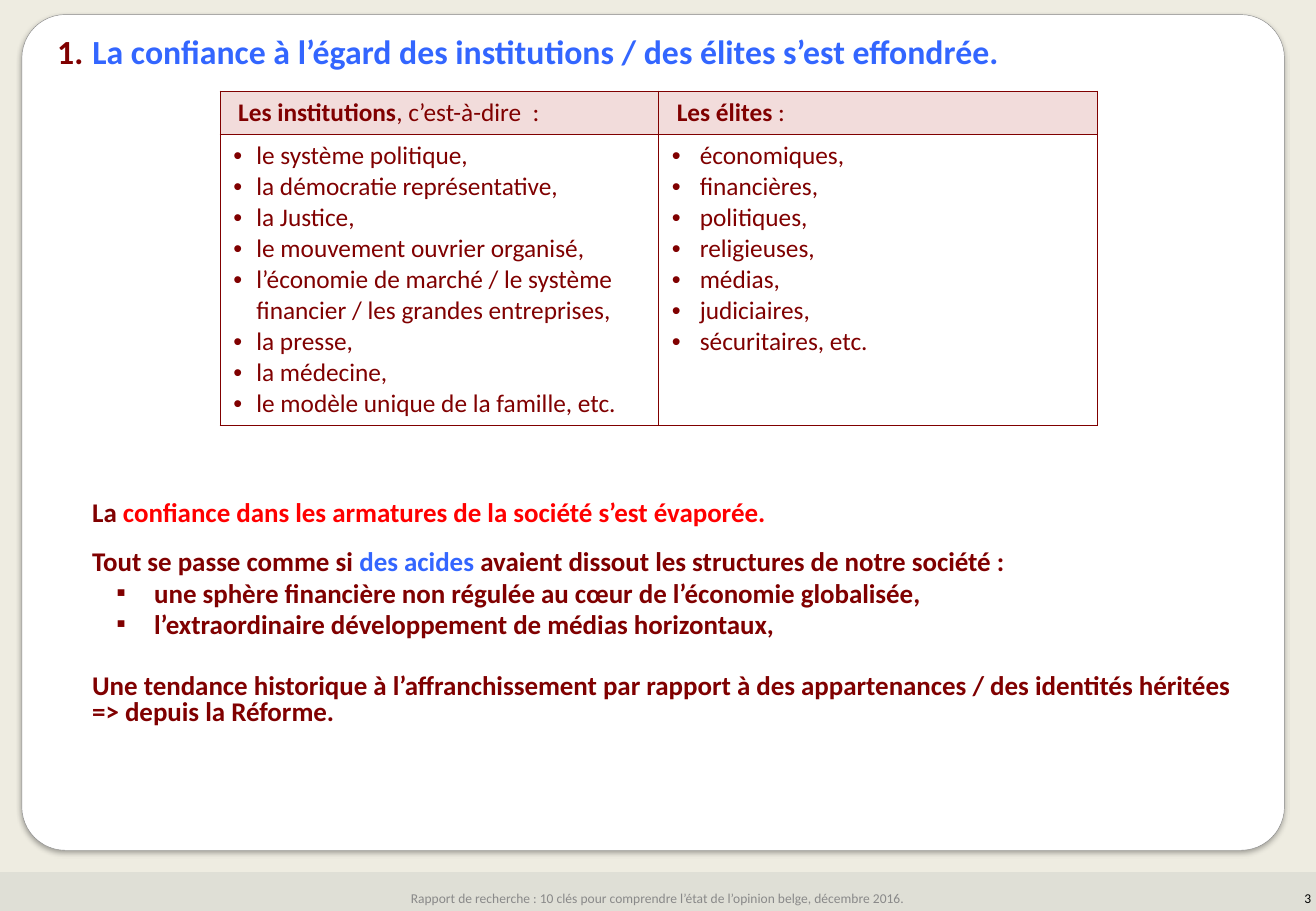
from dataclasses import dataclass
from typing import Any, NamedTuple

import lxml.etree
import pptx
import pptx.dml.color
import pptx.enum.shapes
import pptx.enum.text
import pptx.oxml
import pptx.oxml.ns
import pptx.util

RGBColor = pptx.dml.color.RGBColor
Align = pptx.enum.text.PP_ALIGN
Anchor = pptx.enum.text.MSO_ANCHOR

SAND = RGBColor(0xEE, 0xEC, 0xE1)
BAND = RGBColor(0xDF, 0xDF, 0xD6)
WHITE = RGBColor(0xFF, 0xFF, 0xFF)
BLACK = RGBColor(0x00, 0x00, 0x00)
GREY = RGBColor(0x89, 0x89, 0x89)
MAROON = RGBColor(0x80, 0x00, 0x00)
BLUE = RGBColor(0x33, 0x66, 0xFF)
RED = RGBColor(0xFF, 0x00, 0x00)
PINK = RGBColor(0xF2, 0xDC, 0xDB)

WIDTH = pptx.util.Inches(10.83)
HEIGHT = pptx.util.Inches(7.5)
FONT = "Calibri"
NUMBERED = '<a:buAutoNum {ns} type="arabicPeriod"/>'
ROUND = '<a:buChar {ns} char="•"/>'
SQUARE = '<a:buChar {ns} char="▪"/>'


class Area(NamedTuple):
    """A place on the slide, in hundredths of its width and height."""
    left: float
    top: float
    width: float
    height: float

    def lengths(self) -> tuple[int, int, int, int]:
        return across(self.left), down(self.top), across(self.width), down(self.height)


class Piece(NamedTuple):
    text: str
    color: RGBColor = MAROON
    bold: bool = True


@dataclass(frozen=True)
class Paragraph:
    pieces: tuple[Piece, ...]
    before: float = 3.2
    margin: float = 0.29
    hanging: float = 0
    bullet: str = ""


@dataclass(frozen=True)
class Column:
    heading: tuple[Piece, ...]
    items: tuple[str, ...]
    margin: float


PANEL = Area(1.66, 1.6, 95.94, 91.73)
BOTTOM_BAND = Area(0, 95.73, 100, 4.27)
TITLE = Area(3.42, 3.6, 92.43, 5.07)
TABLE = Area(16.71, 10, 66.66, 36.67)
ROW_HEIGHTS = (4.67, 32)
CLOSING = Area(3.42, 54.4, 92.43, 32.5)
FOOTER = Area(0, 97.2, 100, 2.8)
NUMBER = Area(76.73, 97.2, 23.27, 2.8)

COLUMNS = (
    Column((Piece("Les institutions"), Piece(", c’est-à-dire  :", bold=False)),
           ("le système politique,", "la démocratie représentative,", "la Justice,",
            "le mouvement ouvrier organisé,",
            "l’économie de marché / le système financier / les grandes entreprises,",
            "la presse,", "la médecine,", "le modèle unique de la famille, etc."), 0.19),
    Column((Piece("Les élites "), Piece(":", bold=False)),
           ("économiques,", "financières,", "politiques,", "religieuses,", "médias,",
            "judiciaires,", "sécuritaires, etc."), 0.23),
)

CLOSING_TEXT = (
    Paragraph((Piece("La "),
               Piece("confiance dans les armatures de la société s’est évaporée.", RED))),
    Paragraph((Piece("Tout se passe comme si "), Piece("des acides ", BLUE),
               Piece("avaient dissout les structures de notre société :")), before=14),
    Paragraph((Piece("une sphère financière non régulée au cœur de l’économie globalisée,"),),
              margin=0.8, hanging=0.31, bullet=SQUARE),
    Paragraph((Piece("l’extraordinaire développement de médias horizontaux,"),),
              margin=0.8, hanging=0.31, bullet=SQUARE),
    Paragraph((Piece("Une tendance historique à l’affranchissement par rapport à des "
                     "appartenances / des identités héritées => depuis la Réforme."),),
              before=21),
)


def across(share: float) -> int:
    return round(WIDTH * share / 100)


def down(share: float) -> int:
    return round(HEIGHT * share / 100)


def add_xml(parent: Any, markup: str) -> None:
    """Append DrawingML markup whose {ns} stands for the namespace declaration."""
    parent.append(pptx.oxml.parse_xml(markup.replace("{ns}", pptx.oxml.ns.nsdecls("a"))))


def write(frame: Any, paragraphs: tuple[Paragraph, ...], *, size: float,
          spacing: float = 1.0, align: Any = Align.LEFT, anchor: Any = Anchor.TOP) -> None:
    frame.word_wrap = True
    frame.vertical_anchor = anchor
    for index, content in enumerate(paragraphs):
        para = frame.add_paragraph() if index else frame.paragraphs[0]
        para.alignment = align
        para.line_spacing = spacing
        para.space_before = pptx.util.Pt(content.before)
        properties = para._p.get_or_add_pPr()
        properties.set("marL", str(pptx.util.Inches(content.margin)))
        properties.set("indent", str(-pptx.util.Inches(content.hanging)))
        if content.bullet:
            add_xml(properties, f'<a:buClr {{ns}}><a:srgbClr val="{MAROON}"/></a:buClr>')
            add_xml(properties, '<a:buFont {ns} typeface="Arial"/>' if "buChar" in content.bullet
                    else f'<a:buFont {{ns}} typeface="{FONT}"/>')
            add_xml(properties, content.bullet)
        for piece in content.pieces:
            span = para.add_run()
            span.text = piece.text
            span.font.name = FONT
            span.font.size = pptx.util.Pt(size)
            span.font.bold = piece.bold
            span.font.color.rgb = piece.color


def add_block(page: Any, kind: Any, area: Area, fill: RGBColor) -> Any:
    block = page.shapes.add_shape(kind, *area.lengths())
    block.shadow.inherit = False
    block.fill.solid()
    block.fill.fore_color.rgb = fill
    block.line.fill.background()
    return block


def add_panel(page: Any) -> None:
    panel = add_block(page, pptx.enum.shapes.MSO_SHAPE.ROUNDED_RECTANGLE, PANEL, WHITE)
    panel.adjustments[0] = 0.052
    panel.line.color.rgb = RGBColor(0x8A, 0x8A, 0x8A)
    panel.line.width = pptx.util.Pt(0.25)
    effects = panel._element.spPr.find(pptx.oxml.ns.qn("a:effectLst"))
    add_xml(effects, '<a:outerShdw {ns} blurRad="39370" dist="22860" dir="5400000" rotWithShape="0">'
            '<a:srgbClr val="000000"><a:alpha val="35000"/></a:srgbClr></a:outerShdw>')


def format_cell(cell: Any, fill: RGBColor) -> None:
    cell.fill.solid()
    cell.fill.fore_color.rgb = fill
    cell.margin_left = cell.margin_right = pptx.util.Inches(0.11)
    cell.margin_top = cell.margin_bottom = pptx.util.Inches(0.05)
    properties = cell._tc.get_or_add_tcPr()
    for index, side in enumerate(("lnL", "lnR", "lnT", "lnB")):
        border = lxml.etree.Element(pptx.oxml.ns.qn(f"a:{side}"), w=str(pptx.util.Pt(0.5)))
        add_xml(border, f'<a:solidFill {{ns}}><a:srgbClr val="{MAROON}"/></a:solidFill>')
        properties.insert(index, border)


def add_trust_table(page: Any) -> None:
    table = page.shapes.add_table(2, len(COLUMNS), *TABLE.lengths()).table
    for row, height in zip(table.rows, ROW_HEIGHTS):
        row.height = down(height)
    for index, column in enumerate(COLUMNS):
        table.columns[index].width = across(TABLE.width / len(COLUMNS))
        heading, body = table.cell(0, index), table.cell(1, index)
        format_cell(heading, PINK)
        format_cell(body, WHITE)
        write(heading.text_frame, (Paragraph(column.heading, 0, 0.04),), size=15)
        heading.vertical_anchor = Anchor.MIDDLE
        items = tuple(Paragraph((Piece(item, bold=False),), 0, column.margin, column.margin, ROUND)
                      for item in column.items)
        write(body.text_frame, items, size=15)


def add_small_text(page: Any, area: Area, piece: Piece, align: Any) -> None:
    frame = page.shapes.add_textbox(*area.lengths()).text_frame
    frame.margin_left = frame.margin_right = pptx.util.Inches(0.04)
    frame.margin_top = frame.margin_bottom = pptx.util.Inches(0.04)
    write(frame, (Paragraph((piece,), 0, 0),), size=8, align=align, anchor=Anchor.MIDDLE)


def main() -> None:
    deck = pptx.Presentation()
    deck.slide_width, deck.slide_height = WIDTH, HEIGHT
    page = deck.slides.add_slide(deck.slide_layouts.get_by_name("Title Only"))
    page.background.fill.solid()
    page.background.fill.fore_color.rgb = SAND
    add_block(page, pptx.enum.shapes.MSO_SHAPE.RECTANGLE, BOTTOM_BAND, BAND)
    add_panel(page)

    title = page.shapes.title
    title.left, title.top, title.width, title.height = TITLE.lengths()
    page.shapes._spTree.append(title._element)
    heading = Piece("La confiance à l’égard des institutions / des élites s’est effondrée.", BLUE)
    write(title.text_frame, (Paragraph((heading,), 4, 0.29, 0.29, NUMBERED),),
          size=20, spacing=0.8)

    add_trust_table(page)
    closing = page.shapes.add_textbox(*CLOSING.lengths())
    write(closing.text_frame, CLOSING_TEXT, size=16, spacing=0.8)
    add_small_text(page, FOOTER, Piece("Rapport de recherche : 10 clés pour comprendre l’état de "
                                       "l’opinion belge, décembre 2016.", GREY, False), Align.CENTER)
    add_small_text(page, NUMBER, Piece("3", BLACK, False), Align.RIGHT)
    deck.save("out.pptx")


if __name__ == "__main__":
    main()
